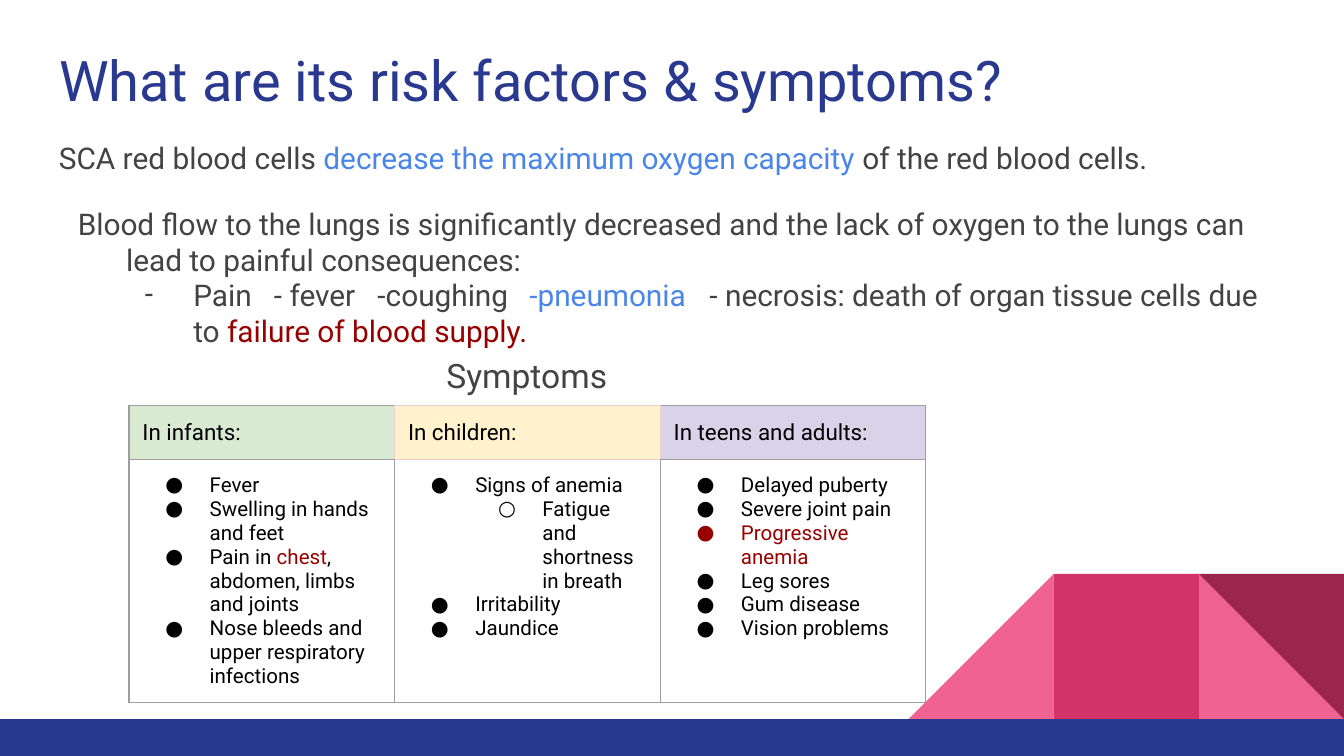
from lxml import etree
from pptx import Presentation
from pptx import util as u
from pptx.dml.color import RGBColor
from pptx.enum import shapes, text
from pptx.oxml import ns

COLORS = {
    "navy": "2A3990", "gray": "434343", "blue": "4A86E8", "red": "980000",
    "black": "000000", "white": "FFFFFF", "pink": "F06292", "rose": "D23369",
    "wine": "9C254D", "green": "D9EAD3", "yellow": "FFF2CC", "purple": "D9D2E9",
    "border": "9E9E9E", "blush": "F4CCCC",
}
FONT = "Roboto"
COLUMNS, ROWS = 100, 56.25  # square grid cells


def rgb(name):
    return RGBColor.from_string(COLORS[name])


def add_xml(parent, tag, **attributes):
    return etree.SubElement(parent, ns.qn(tag), attributes)


def add_color(parent, name):
    add_xml(parent, "a:srgbClr", val=COLORS[name])


def write(paragraph, runs, size=16, color="gray", align=text.PP_ALIGN.LEFT, spacing=1.0,
          after=0, margin=0, indent=0, level=0, bullet=None, bullet_color=None, tabs=()):
    """Fill a paragraph; each run is a string or a (string, color) pair."""
    paragraph.alignment, paragraph.level = align, level
    paragraph.line_spacing = spacing
    paragraph.space_before, paragraph.space_after = u.Pt(0), u.Pt(after)
    properties = paragraph._p.get_or_add_pPr()
    properties.set("marL", str(u.Inches(margin)))
    properties.set("indent", str(u.Inches(indent)))
    if bullet:
        add_color(add_xml(properties, "a:buClr"), bullet_color or color)
        add_xml(properties, "a:buFont", typeface=FONT)
        add_xml(properties, "a:buChar", char=bullet)
    else:
        add_xml(properties, "a:buNone")
    if tabs:
        tab_list = add_xml(properties, "a:tabLst")
        for position in tabs:
            add_xml(tab_list, "a:tab", pos=str(u.Inches(position)), algn="l")
    for item in [runs] if isinstance(runs, str) else runs:
        words, run_color = (item, color) if isinstance(item, str) else item
        run = paragraph.add_run()
        run.text = words
        run.font.name, run.font.size = FONT, u.Pt(size)
        run.font.color.rgb = rgb(run_color)


class Deck:
    def __init__(self):
        self.presentation = Presentation()
        self.presentation.slide_width = u.Inches(10)
        self.presentation.slide_height = u.Inches(5.625)
        self.slide = self.presentation.slides.add_slide(self.presentation.slide_layouts[5])

    def box(self, column, row, columns, rows):
        x = self.presentation.slide_width / COLUMNS
        y = self.presentation.slide_height / ROWS
        return [round(v) for v in (column * x, row * y, columns * x, rows * y)]

    def fill_frame(self, frame, paragraphs):
        frame.word_wrap = True
        frame.auto_size = text.MSO_AUTO_SIZE.NONE
        frame.vertical_anchor = text.MSO_ANCHOR.TOP
        frame.margin_left = frame.margin_right = u.Inches(0.1)
        frame.margin_top = frame.margin_bottom = u.Inches(0.1)
        for index, (runs, style) in enumerate(paragraphs):
            write(frame.add_paragraph() if index else frame.paragraphs[0], runs, **style)

    def title(self, words, *place, **style):
        shape = self.slide.shapes.title
        shape.left, shape.top, shape.width, shape.height = self.box(*place)
        self.fill_frame(shape.text_frame, [(words, style)])

    def textbox(self, paragraphs, *place):
        shape = self.slide.shapes.add_textbox(*self.box(*place))
        self.fill_frame(shape.text_frame, paragraphs)

    def block(self, kind, color, *place, rotation=0):
        shape = self.slide.shapes.add_shape(kind, *self.box(*place))
        shape.shadow.inherit = False
        shape.fill.solid()
        shape.fill.fore_color.rgb = rgb(color)
        shape.line.fill.background()
        shape.rotation = rotation

    def cell(self, cell, paragraphs, fill=None, edges=None):
        """Fill a table cell; edges names the colors that differ from the usual border."""
        cell.margin_left = cell.margin_right = u.Inches(0.1)
        cell.margin_top = cell.margin_bottom = u.Inches(0.1)
        for index, (runs, style) in enumerate(paragraphs):
            frame = cell.text_frame
            write(frame.add_paragraph() if index else frame.paragraphs[0], runs, **style)
        properties = cell._tc.get_or_add_tcPr()
        for side in "LRTB":
            line = add_xml(properties, f"a:ln{side}", w=str(u.Pt(0.75)))
            add_color(add_xml(line, "a:solidFill"), (edges or {}).get(side, "border"))
        if fill:
            cell.fill.solid()
            cell.fill.fore_color.rgb = rgb(fill)
        else:
            cell.fill.background()

    def table(self, groups, column, row, columns, heights):
        frame = self.slide.shapes.add_table(
            2, len(groups), *self.box(column, row, columns, sum(heights)))
        table = frame.table
        table.first_row = table.horz_banding = False
        for table_row, height in zip(table.rows, heights):
            table_row.height = self.box(0, 0, 0, height)[3]
        for index, (heading, fill, head_edges, body_edges, items) in enumerate(groups):
            self.cell(table.cell(0, index), [(heading, dict(size=12, color="black"))],
                      fill, head_edges)
            self.cell(table.cell(1, index), items, edges=body_edges)


def item(runs, level=0, **style):
    return runs, dict(size=11, color="black", level=level, margin=0.5 + 0.5 * level,
                      indent=-0.33, bullet="●○"[level]) | style


def main():
    deck = Deck()

    # Corner ornament and footer band
    side, top, left = 10.8, 42.7, 67.6
    triangle, square = shapes.MSO_SHAPE.RIGHT_TRIANGLE, shapes.MSO_SHAPE.RECTANGLE
    for kind, color, step, rotation in [
        (triangle, "pink", 2, 0), (triangle, "pink", 0, 270),
        (square, "rose", 1, 0), (triangle, "wine", 2, 180),
    ]:
        deck.block(kind, color, left + step * side, top, side, side, rotation=rotation)
    deck.block(square, "navy", 0, top + side, COLUMNS, ROWS - top - side)

    # Title and body
    deck.title("What are its risk factors & symptoms?", 3.4, 2.4, 93.2, 6.6,
               size=30, color="navy")
    deck.textbox([
        (["SCA red blood cells ", ("decrease the maximum oxygen capacity", "blue"),
          " of the red blood cells."], dict(spacing=1.15, after=16)),
        ("Blood flow to the lungs is significantly decreased and the lack of oxygen "
         "to the lungs can lead to painful consequences:", dict(margin=0.5, indent=-0.36)),
        (["Pain\t- fever\t-coughing\t", ("-pneumonia\t", "blue"),
          "- necrosis: death of organ tissue cells due to ",
          ("failure of blood supply.", "red")],
         dict(margin=1, indent=-0.36, bullet="-", tabs=(1.6, 2.37, 3.5, 4.84))),
    ], 3.4, 9, 93.2, 36.5)

    # Symptoms table
    blush = "blush"
    deck.table([
        ("In infants:", "green", {"R": blush}, None, [
            item("Fever"),
            item("Swelling in hands and feet"),
            item(["Pain in ", ("chest", "red"), ", abdomen, limbs and joints"]),
            item("Nose bleeds and upper respiratory infections"),
        ]),
        ("In children:", "yellow", dict.fromkeys("LRTB", blush), {"T": blush}, [
            item("Signs of anemia"),
            item("Fatigue and shortness in breath", level=1),
            item("Irritability"),
            item("Jaundice"),
        ]),
        ("In teens and adults:", "purple", {"L": blush}, None, [
            item("Delayed puberty"),
            item("Severe joint pain"),
            item("Progressive anemia", color="red"),
            item("Leg sores"),
            item("Gum disease"),
            item("Vision problems"),
        ]),
    ], 9.6, 30.2, 59.3, (4, 18))
    deck.textbox([("Symptoms", dict(size=18, align=text.PP_ALIGN.CENTER))],
                 18.2, 25.4, 42, 5.4)

    deck.presentation.save("out.pptx")


if __name__ == "__main__":
    main()
